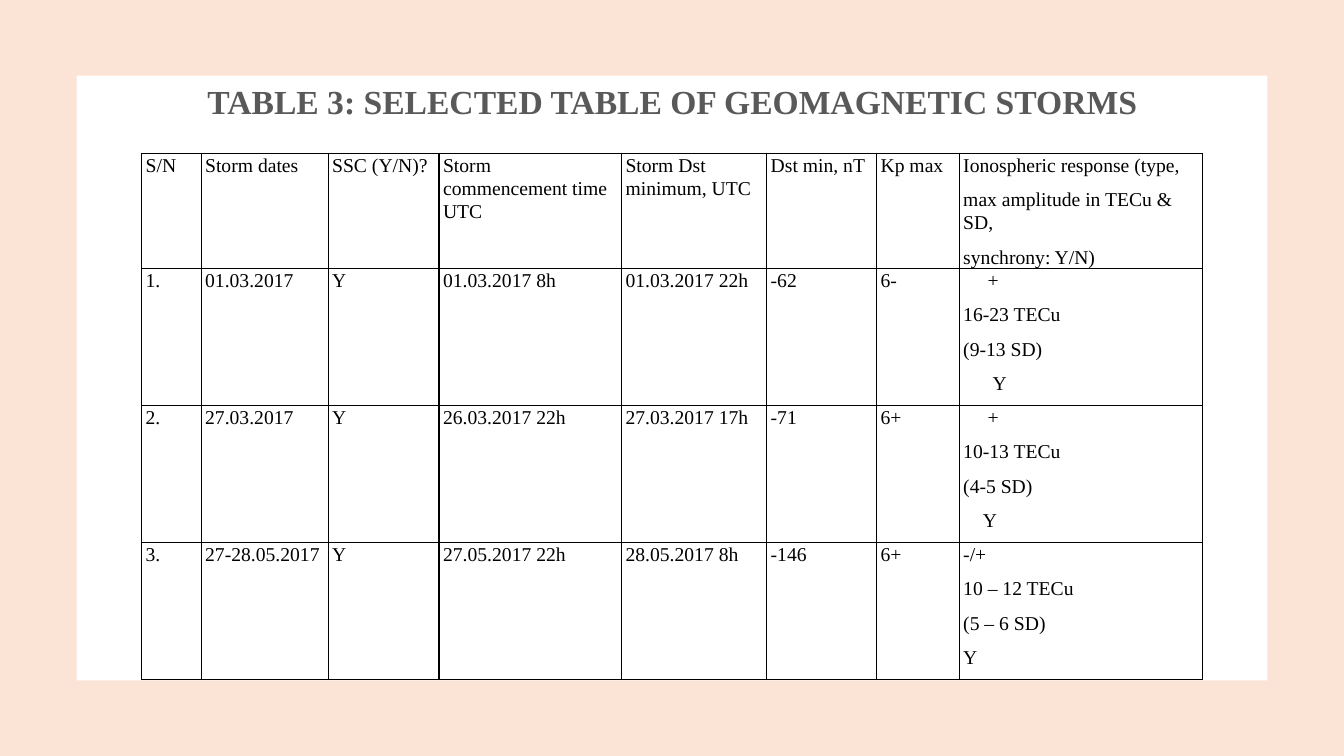
from lxml import etree
from pptx import Presentation
from pptx import util as u
from pptx.dml.color import RGBColor
from pptx.enum import shapes, text
from pptx.oxml import ns

WIDTH, HEIGHT = 13.33, 7.5
PEACH = RGBColor(0xFB, 0xE3, 0xD6)
WHITE = RGBColor(0xFF, 0xFF, 0xFF)
GREY = RGBColor(0x59, 0x59, 0x59)
BLACK = RGBColor(0x00, 0x00, 0x00)
FONT = "Times New Roman"

TITLE = "TABLE 3: SELECTED TABLE OF GEOMAGNETIC STORMS"
COLUMNS = [0.59, 1.26, 1.1, 1.81, 1.44, 1.09, 0.82, 2.41]
ROWS = [0.98, 1.36, 1.36, 1.36]
# A leading tab stands for one indent step within the response column.
STORMS = [
    ["S/N", "Storm dates", "SSC (Y/N)?", "Storm commencement time UTC",
     "Storm Dst minimum, UTC", "Dst min, nT", "Kp max",
     "Ionospheric response (type,\nmax amplitude in TECu & SD,\nsynchrony: Y/N)"],
    ["1.", "01.03.2017", "Y", "01.03.2017 8h", "01.03.2017 22h", "-62", "6-",
     "\t\t\t\t\t+\n16-23 TECu\n(9-13 SD)\n\t\t\t\t\t\tY"],
    ["2.", "27.03.2017", "Y", "26.03.2017 22h", "27.03.2017 17h", "-71", "6+",
     "\t\t\t\t\t+\n10-13 TECu\n(4-5 SD)\n\t\t\t\tY"],
    ["3.", "27-28.05.2017", "Y", "27.05.2017 22h", "28.05.2017 8h", "-146", "6+",
     "-/+\n10 – 12 TECu\n(5 – 6 SD)\nY"],
]
INDENT_STEP = u.Pt(3.5)


def inches(*lengths):
    return [u.Inches(length) for length in lengths]


def style_font(paragraph, size, color, bold=False):
    font = paragraph.font
    font.name, font.size, font.bold = FONT, u.Pt(size), bold
    font.color.rgb = color


def add_panel(slide, box, color):
    panel = slide.shapes.add_shape(shapes.MSO_SHAPE.RECTANGLE, *inches(*box))
    panel.shadow.inherit = False
    panel.fill.solid()
    panel.fill.fore_color.rgb = color
    panel.line.fill.background()


def place_title(slide, box):
    """Fill the title placeholder and lift it above the panels."""
    title = slide.shapes.title
    title.left, title.top, title.width, title.height = inches(*box)
    frame = title.text_frame
    frame.text = TITLE
    frame.word_wrap = True
    frame.auto_size = text.MSO_AUTO_SIZE.NONE
    frame.vertical_anchor = text.MSO_ANCHOR.TOP
    frame.margin_top = u.Inches(0.1)
    heading = frame.paragraphs[0]
    heading.alignment = text.PP_ALIGN.CENTER
    heading.line_spacing = 0.9
    style_font(heading, 24, GREY, bold=True)
    title.element.getparent().append(title.element)


def outline_cell(cell):
    properties = cell._tc.get_or_add_tcPr()
    for position, side in enumerate(("lnL", "lnR", "lnT", "lnB")):
        border = etree.Element(ns.qn(f"a:{side}"), w=str(u.Pt(1)))
        fill = etree.SubElement(border, ns.qn("a:solidFill"))
        etree.SubElement(fill, ns.qn("a:srgbClr"), val=str(BLACK))
        properties.insert(position, border)


def fill_cell(cell, content):
    cell.fill.background()
    outline_cell(cell)
    cell.margin_left = cell.margin_right = u.Inches(0.04)
    cell.margin_top = cell.margin_bottom = 0
    lines = content.split("\n")
    cell.text = "\n".join(line.lstrip("\t") for line in lines)
    for paragraph, line in zip(cell.text_frame.paragraphs, lines):
        paragraph.line_spacing = 1.07
        paragraph.space_after = u.Pt(8)
        style_font(paragraph, 14, BLACK)
        steps = line.count("\t")
        if steps:
            paragraph._p.get_or_add_pPr().set("marL", str(steps * INDENT_STEP))


def add_storm_table(slide, left, top):
    box = inches(left, top, sum(COLUMNS), sum(ROWS))
    table = slide.shapes.add_table(len(ROWS), len(COLUMNS), *box).table
    table.first_row = table.horz_banding = False
    for column, width in zip(table.columns, COLUMNS):
        column.width = u.Inches(width)
    for row, height, storm in zip(table.rows, ROWS, STORMS):
        row.height = u.Inches(height)
        for cell, content in zip(row.cells, storm):
            fill_cell(cell, content)


def build_storm_slide(deck):
    slide = deck.slides.add_slide(deck.slide_layouts[5])
    add_panel(slide, (0, 0, WIDTH, HEIGHT), PEACH)
    margin_x, margin_y = 0.76, HEIGHT / 10
    add_panel(slide, (margin_x, margin_y, WIDTH - 2 * margin_x,
                      HEIGHT - 2 * margin_y), WHITE)
    place_title(slide, (1.59, margin_y, 10.16, 0.91))
    add_storm_table(slide, (WIDTH - sum(COLUMNS)) / 2, 1.52)


def main():
    deck = Presentation()
    deck.slide_width, deck.slide_height = inches(WIDTH, HEIGHT)
    build_storm_slide(deck)
    deck.save("out.pptx")


if __name__ == "__main__":
    main()
